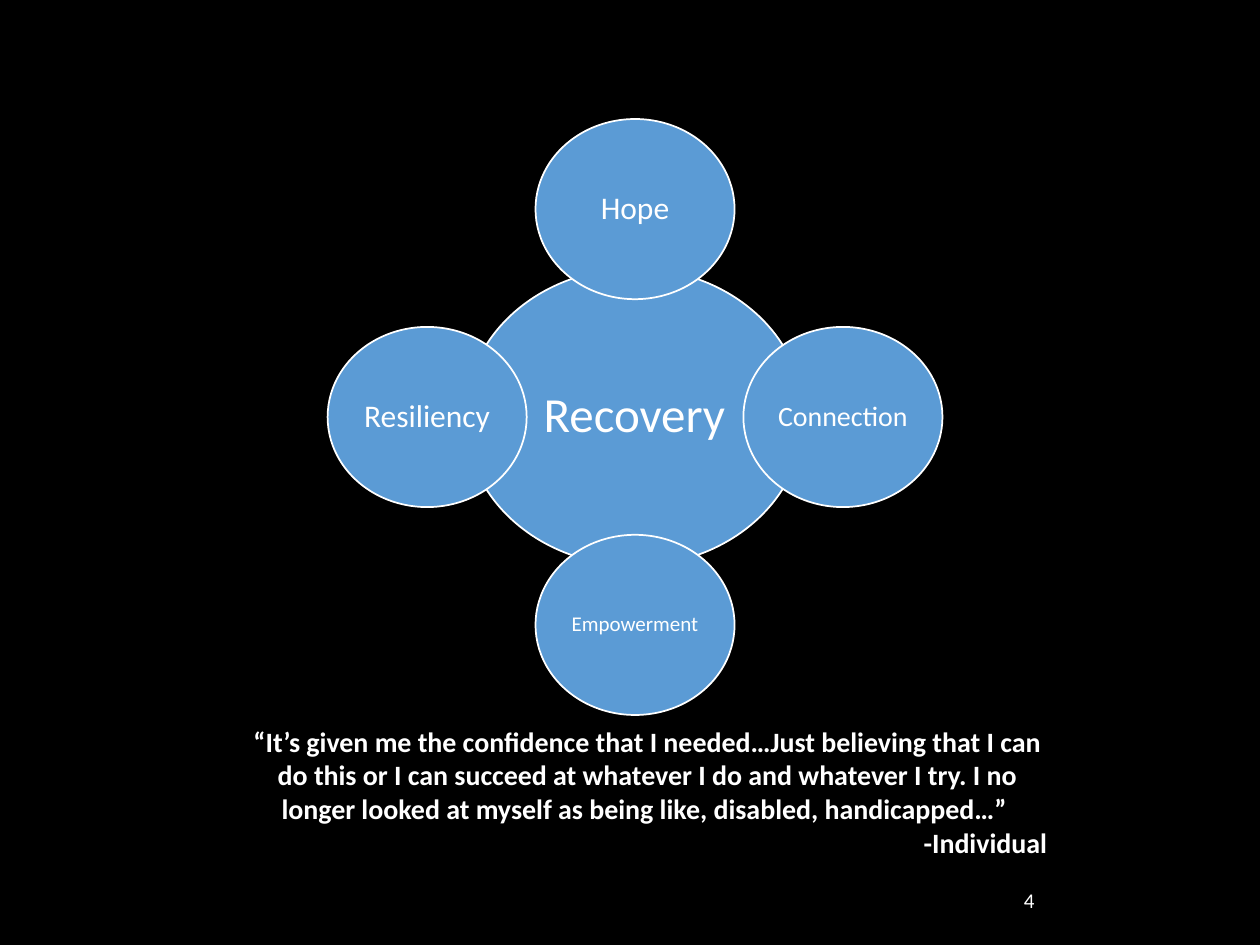
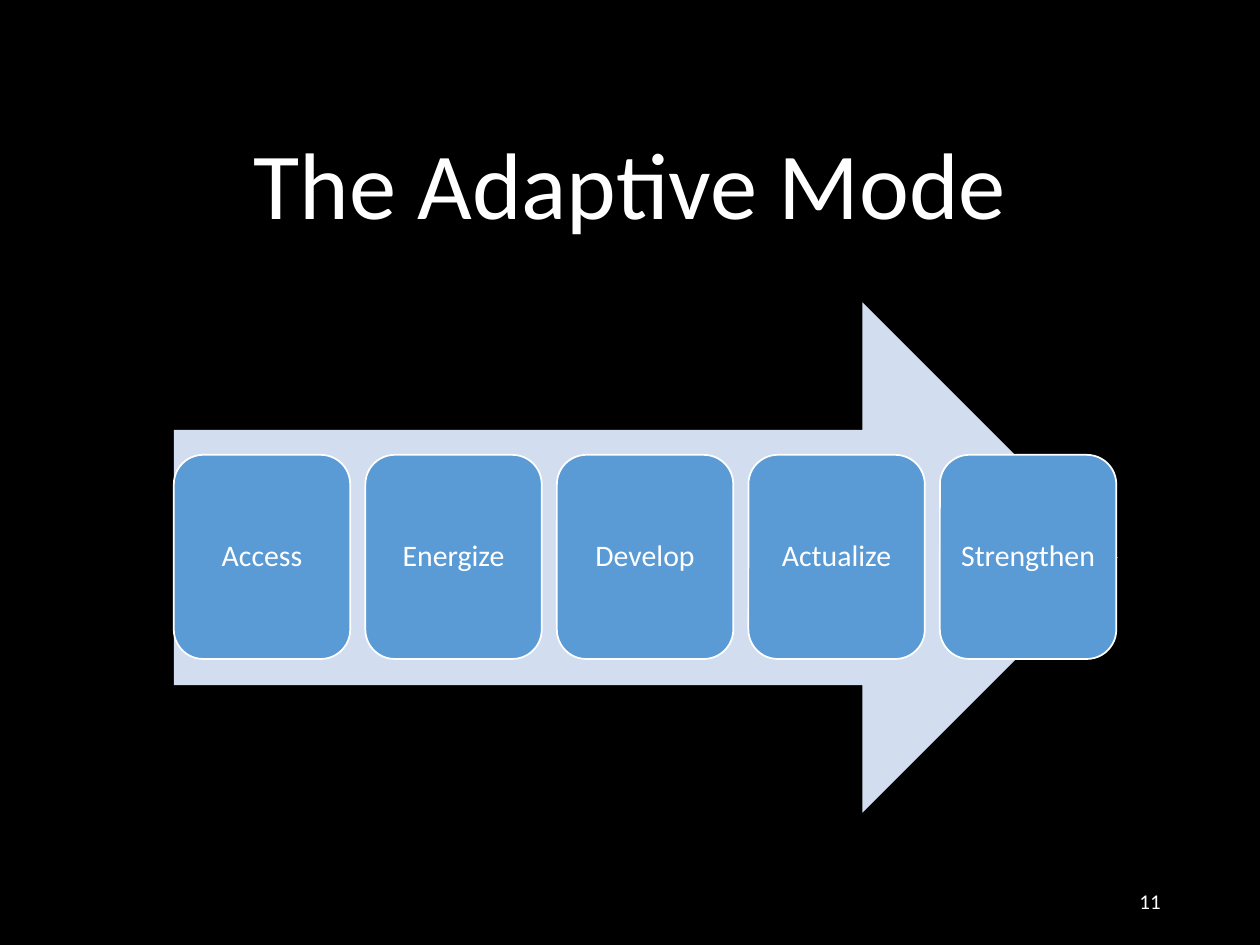
from dataclasses import dataclass

from pptx import Presentation
from pptx.dml.color import RGBColor
from pptx.enum import shapes, text
from pptx.util import Inches, Pt

FONT = "Calibri"
HUES = {"back": "000000", "ink": "FFFFFF", "blue": "5B9BD5", "pale": "D2DEEF"}
KIND = shapes.MSO_SHAPE
SIDE = text.PP_ALIGN
MID = text.MSO_ANCHOR.MIDDLE
TOP = text.MSO_ANCHOR.TOP


@dataclass
class Box:
    left: float
    top: float
    wide: float
    high: float

    def area(self) -> tuple:
        return tuple(Inches(n) for n in (self.left, self.top, self.wide, self.high))


@dataclass
class Node:
    label: str
    size: float
    box: Box
    kind: int = KIND.OVAL
    inset: float = 0.02


def hue(name: str) -> RGBColor:
    return RGBColor.from_string(HUES[name])


def write(shape, *lines: str, size: float, bold: bool = False, sides=(SIDE.CENTER,),
          anchor=MID, inset: float = 0.1, lead: float = 1.0) -> None:
    """Fill a shape with one paragraph per line; sides gives each alignment."""
    frame = shape.text_frame
    frame.word_wrap = True
    frame.vertical_anchor = anchor
    frame.margin_left = frame.margin_right = Inches(inset)
    frame.margin_top = frame.margin_bottom = Inches(inset)
    frame.text = "\n".join(lines)
    for para, side in zip(frame.paragraphs, sides):
        para.alignment = side
        para.line_spacing = lead
        font = para.runs[0].font
        font.name, font.size, font.bold = FONT, Pt(size), bold
        font.color.rgb = hue("ink")


def draw(slide, kind: int, box: Box, fill: str, edge: bool = True):
    shape = slide.shapes.add_shape(kind, *box.area())
    shape.shadow.inherit = False
    shape.fill.solid()
    shape.fill.fore_color.rgb = hue(fill)
    if edge:
        shape.line.color.rgb = hue("ink")
        shape.line.width = Pt(1)
    else:
        shape.line.fill.background()
    return shape


def place(slide, node: Node) -> None:
    shape = draw(slide, node.kind, node.box, "blue")
    write(shape, node.label, size=node.size, inset=node.inset, lead=0.9)


def start(deck, layout: int, page: int, box: Box, inset: float):
    """Add a black slide with its page number."""
    slide = deck.slides.add_slide(deck.slide_layouts[layout])
    slide.background.fill.solid()
    slide.background.fill.fore_color.rgb = hue("back")
    note = slide.shapes.add_textbox(*box.area())
    write(note, str(page), size=12, sides=[SIDE.RIGHT], inset=inset)
    return slide


def wheel(deck) -> None:
    slide = start(deck, 6, 4, Box(8.02, 7, 0.21, 0.29), 0.02)

    # Hub with four petals at equal distance
    mid_x, mid_y, reach = 5.04, 3.31, 1.65
    wide, high = 1.58, 1.43
    place(slide, Node("Recovery", 28, Box(3.69, 2.13, 2.69, 2.36), inset=0.04))
    petals = [("Hope", 18, 0, -1), ("Connection", 16, 1, 0),
              ("Empowerment", 12, 0, 1), ("Resiliency", 18, -1, 0)]
    for label, size, across, down in petals:
        left = mid_x + across * reach - wide / 2
        top = mid_y + down * reach - high / 2
        place(slide, Node(label, size, Box(left, top, wide, high)))

    # Quote
    quote = slide.shapes.add_textbox(*Box(1.92, 5.7, 6.44, 1.18).area())
    write(quote,
          "“It’s given me the confidence that I needed…Just believing that I can "
          "do this or I can succeed at whatever I do and whatever I try. I no "
          "longer looked at myself as being like, disabled, handicapped…” ",
          "-Individual", size=16, bold=True, sides=[SIDE.CENTER, SIDE.RIGHT],
          anchor=TOP, inset=0.05)


def steps(deck) -> None:
    slide = start(deck, 5, 11, Box(7.06, 6.95, 2.25, 0.4), 0.1)

    # Title
    title = slide.shapes.title
    title.left, title.top, title.width, title.height = Box(0.5, 0.73, 9, 1.54).area()
    write(title, "The Adaptive Mode", size=54, lead=0.9)

    # Arrow with five equal steps
    draw(slide, KIND.RIGHT_ARROW, Box(1.38, 2.4, 7.49, 4.05), "pale", edge=False)
    labels = ["Access", "Energize", "Develop", "Actualize", "Strengthen"]
    for i, label in enumerate(labels):
        box = Box(1.38 + i * 1.52, 3.61, 1.4, 1.62)
        place(slide, Node(label, 17, box, KIND.ROUNDED_RECTANGLE, 0.07))


def main() -> None:
    deck = Presentation()
    deck.slide_width, deck.slide_height = Inches(10), Inches(7.5)
    wheel(deck)
    steps(deck)
    deck.save("out.pptx")


if __name__ == "__main__":
    main()
